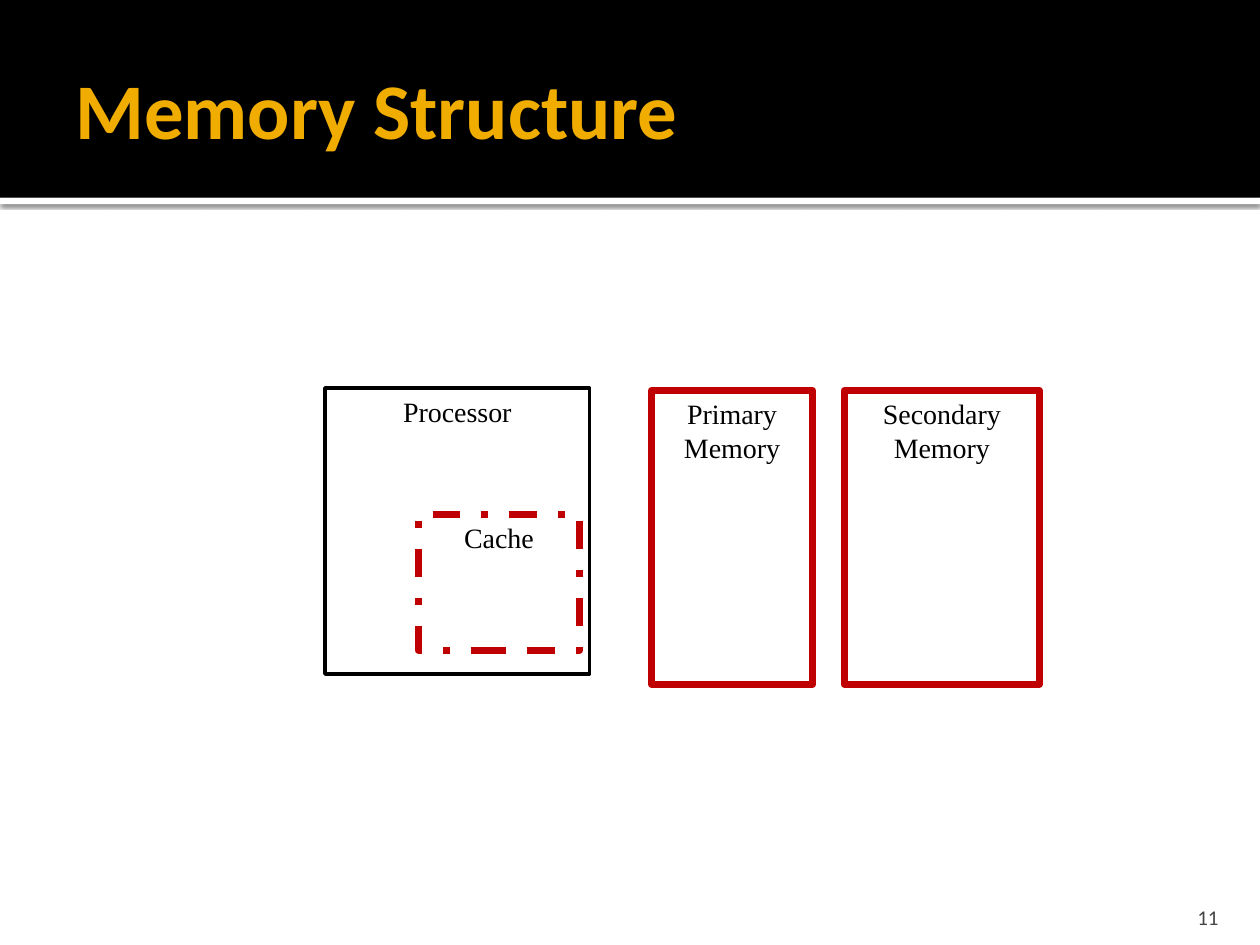
import dataclasses

import pptx
import pptx.dml.color
import pptx.enum.dml
import pptx.enum.shapes
import pptx.enum.text
import pptx.oxml
import pptx.oxml.ns
import pptx.util

Inches = pptx.util.Inches
Pt = pptx.util.Pt
ALIGN = pptx.enum.text.PP_ALIGN
ANCHOR = pptx.enum.text.MSO_ANCHOR


@dataclasses.dataclass(frozen=True)
class Theme:
    black: str = "000000"
    white: str = "FFFFFF"
    gold: str = "F0AD00"
    red: str = "C00000"
    grey: str = "454545"
    heading_font: str = "Calibri"
    diagram_font: str = "Times New Roman"
    title_size: int = 45
    label_size: int = 16
    number_size: int = 12


def rgb(color):
    return pptx.dml.color.RGBColor.from_string(color)


class Deck:
    def __init__(self, prs, theme):
        self.theme = theme
        self.slide = prs.slides.add_slide(prs.slide_layouts[6])

    def rect(self, at):
        sp = self.slide.shapes.add_shape(
            pptx.enum.shapes.MSO_SHAPE.RECTANGLE, *map(Inches, at))
        sp.shadow.inherit = False
        return sp

    def add_lines(self, sp, lines, font, size, color, align, anchor, insets, bold=False):
        tf = sp.text_frame
        tf.word_wrap = True
        tf.vertical_anchor = anchor
        tf.margin_left, tf.margin_top, tf.margin_right, tf.margin_bottom = map(Inches, insets)
        for i, line in enumerate(lines):
            p = tf.add_paragraph() if i else tf.paragraphs[0]
            p.alignment = align
            r = p.add_run()
            r.text = line
            r.font.name = font
            r.font.size = Pt(size)
            r.font.bold = bold
            r.font.color.rgb = rgb(color)

    def band(self, at, color, shadow=False):
        sp = self.rect(at)
        sp.fill.solid()
        sp.fill.fore_color.rgb = rgb(color)
        sp.line.fill.background()
        if shadow:
            effects = sp.element.spPr.find(pptx.oxml.ns.qn("a:effectLst"))
            effects.append(pptx.oxml.parse_xml(
                f'<a:outerShdw {pptx.oxml.ns.nsdecls("a")} blurRad="{Pt(2.5)}" '
                f'dist="{Pt(0.8)}" dir="5400000" algn="tl" rotWithShape="0">'
                f'<a:srgbClr val="{self.theme.black}"><a:alpha val="60000"/></a:srgbClr>'
                '</a:outerShdw>'))

    def box(self, at, lines, color, width, dash=None):
        sp = self.rect(at)
        sp.fill.background()
        sp.line.color.rgb = rgb(color)
        sp.line.width = Pt(width)
        if dash:
            sp.line.dash_style = dash
        self.add_lines(sp, lines, self.theme.diagram_font, self.theme.label_size,
                       self.theme.black, ALIGN.CENTER, ANCHOR.TOP, (0.1, 0.05, 0.1, 0.05))

    def text(self, at, line, size, color, align, anchor, insets, bold=False):
        sp = self.slide.shapes.add_textbox(*map(Inches, at))
        self.add_lines(sp, [line], self.theme.heading_font, size, color,
                       align, anchor, insets, bold)


def main():
    prs = pptx.Presentation()
    prs.slide_width, prs.slide_height = Inches(10), Inches(7.5)
    theme = Theme()
    deck = Deck(prs, theme)

    deck.band((0, 1.57, 10, 0.05), theme.white, shadow=True)
    deck.band((0, 0, 10, 1.57), theme.black)
    deck.text((0.5, 0.17, 9, 1.37), "Memory Structure", theme.title_size, theme.gold,
              ALIGN.LEFT, ANCHOR.MIDDLE, (0.1, 0.05, 0.05, 0.05), bold=True)

    deck.box((2.58, 3.08, 2.1, 2.27), ["Processor"], theme.black, 2)
    deck.box((3.32, 4.08, 1.28, 1.08), ["Cache"], theme.red, 4,
             pptx.enum.dml.MSO_LINE.DASH_DOT)
    deck.box((5.17, 3.1, 1.28, 2.33), ["Primary", "Memory"], theme.red, 4)
    deck.box((6.7, 3.1, 1.55, 2.33), ["Secondary Memory"], theme.red, 4)

    deck.text((8.97, 7.08, 0.8, 0.3), "11", theme.number_size, theme.grey,
              ALIGN.RIGHT, ANCHOR.BOTTOM, (0.1, 0.05, 0.1, 0))
    prs.save("out.pptx")


if __name__ == "__main__":
    main()
